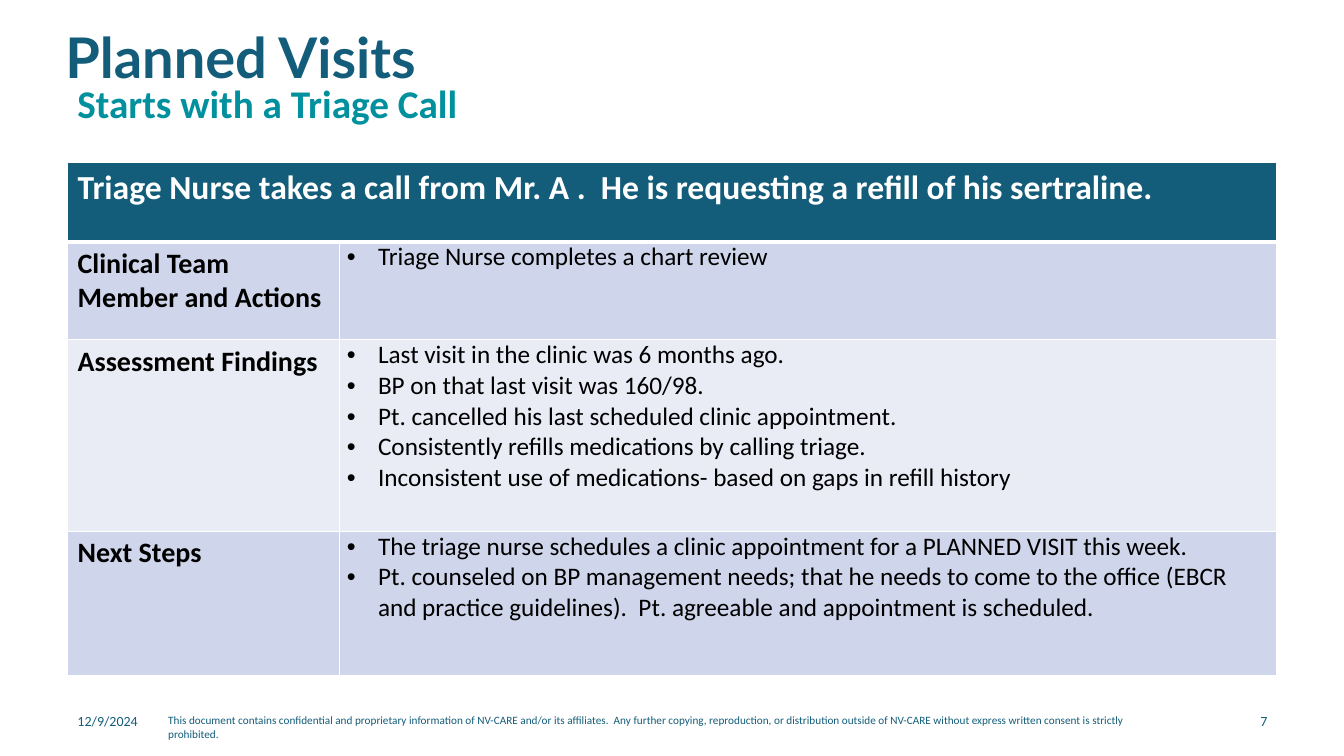
"""Build the Planned Visits triage call slide."""
import pptx
import pptx.dml.color
import pptx.enum.text
import pptx.oxml
import pptx.oxml.ns
import pptx.util
from pptx.util import Inches

RGBColor = pptx.dml.color.RGBColor
ALIGN = pptx.enum.text.PP_ALIGN
ANCHOR = pptx.enum.text.MSO_ANCHOR

NAVY = RGBColor(0x13, 0x5D, 0x7A)
TEAL = RGBColor(0x00, 0x90, 0x9E)
WHITE = RGBColor(0xFF, 0xFF, 0xFF)
BLACK = RGBColor(0x00, 0x00, 0x00)
BAND_DARK = RGBColor(0xCF, 0xD5, 0xEA)
BAND_LIGHT = RGBColor(0xE9, 0xEB, 0xF5)

HEADLINE = "Triage Nurse takes a call from Mr. A .  He is requesting a refill of his sertraline."
VISIT_STEPS = [
    ("Clinical Team Member and Actions", ["Triage Nurse completes a chart review"]),
    ("Assessment Findings", [
        "Last visit in the clinic was 6 months ago.",
        "BP on that last visit was 160/98.",
        "Pt. cancelled his last scheduled clinic appointment.",
        "Consistently refills medications by calling triage.",
        "Inconsistent use of medications- based on gaps in refill history",
    ]),
    ("Next Steps", [
        "The triage nurse schedules a clinic appointment for a PLANNED VISIT this week.",
        "Pt. counseled on BP management needs; that he needs to come to the office "
        "(EBCR and practice guidelines).  Pt. agreeable and appointment is scheduled.",
    ]),
]
NOTICE = (
    "This document contains confidential and proprietary information of NV-CARE and/or its "
    "affiliates.  Any further copying, reproduction, or distribution outside of NV-CARE "
    "without express written consent is strictly prohibited."
)
COLUMN_WIDTHS = [2.7, 9.29]
ROW_HEIGHTS = [0.79, 0.97, 1.9, 1.43]


def style_runs(paragraph, size, color, bold=False, font="Calibri"):
    """Format every run of a paragraph."""
    for run in paragraph.runs:
        run.font.name = font
        run.font.size = pptx.util.Pt(size)
        run.font.bold = bold
        run.font.color.rgb = color


def add_label(slide, box, text, size, color=NAVY, bold=False, font="Calibri",
              anchor=ANCHOR.TOP, align=ALIGN.LEFT, spacing=1.0):
    """Add one line of text in a box."""
    frame = slide.shapes.add_textbox(*map(Inches, box)).text_frame
    frame.word_wrap = True
    frame.vertical_anchor = anchor
    frame.text = text
    paragraph = frame.paragraphs[0]
    paragraph.alignment = align
    paragraph.line_spacing = spacing
    style_runs(paragraph, size, color, bold, font)


def finish_cell(cell, fill, top=1, bottom=1):
    """Give a cell white borders and a solid fill."""
    properties = cell._tc.get_or_add_tcPr()
    for side, width in (("L", 1), ("R", 1), ("T", top), ("B", bottom)):
        properties.append(pptx.oxml.parse_xml(
            f'<a:ln{side} {pptx.oxml.ns.nsdecls("a")} w="{pptx.util.Pt(width)}">'
            f'<a:solidFill><a:srgbClr val="{WHITE}"/></a:solidFill></a:ln{side}>'))
    cell.fill.solid()
    cell.fill.fore_color.rgb = fill


def fill_heading(cell, text, size, color):
    """Write a bold heading in a cell."""
    cell.text_frame.text = text
    style_runs(cell.text_frame.paragraphs[0], size, color, bold=True)


def fill_bullets(cell, items):
    """Write a bulleted list in a cell."""
    cell.margin_left = cell.margin_right = Inches(0.07)
    cell.margin_top = cell.margin_bottom = Inches(0)
    cell.text_frame.text = "\n".join(items)
    for paragraph in cell.text_frame.paragraphs:
        properties = paragraph._p.get_or_add_pPr()
        properties.set("marL", str(Inches(0.31)))
        properties.set("indent", str(-Inches(0.31)))
        for bullet in ('a:buFont {} typeface="Arial"', 'a:buChar {} char="•"'):
            properties.append(pptx.oxml.parse_xml(
                f'<{bullet.format(pptx.oxml.ns.nsdecls("a"))}/>'))
        style_runs(paragraph, 18, BLACK)


def add_visit_table(slide):
    """Add the table of triage call steps."""
    box = (0.67, 1.61, sum(COLUMN_WIDTHS), sum(ROW_HEIGHTS))
    table = slide.shapes.add_table(
        len(ROW_HEIGHTS), len(COLUMN_WIDTHS), *map(Inches, box)).table
    for column, width in zip(table.columns, COLUMN_WIDTHS):
        column.width = Inches(width)
    for row, height in zip(table.rows, ROW_HEIGHTS):
        row.height = Inches(height)
    table.cell(0, 0).merge(table.cell(0, 1))
    fill_heading(table.cell(0, 0), HEADLINE, 24, WHITE)
    for cell in table.rows[0].cells:
        finish_cell(cell, NAVY, bottom=3)
    for index, (step, items) in enumerate(VISIT_STEPS, start=1):
        fill_heading(table.cell(index, 0), step, 20, BLACK)
        fill_bullets(table.cell(index, 1), items)
        for cell in table.rows[index].cells:
            finish_cell(cell, BAND_DARK if index % 2 else BAND_LIGHT,
                        top=3 if index == 1 else 1)


def main():
    """Build and save the slide."""
    deck = pptx.Presentation()
    deck.slide_width, deck.slide_height = Inches(13.33), Inches(7.5)
    slide = deck.slides.add_slide(deck.slide_layouts[6])
    add_label(slide, (0.55, 0.25, 11.75, 0.62), "Planned Visits", 40,
              bold=True, font="Lato", spacing=0.9)
    add_label(slide, (0.67, 0.41, 11.66, 0.9), "Starts with a Triage Call", 28,
              TEAL, bold=True, anchor=ANCHOR.BOTTOM, spacing=0.9)
    add_visit_table(slide)
    add_label(slide, (0.67, 6.95, 1.01, 0.4), "12/9/2024", 10, anchor=ANCHOR.MIDDLE)
    add_label(slide, (1.57, 7.03, 10.2, 0.32), NOTICE, 8)
    add_label(slide, (11.66, 6.95, 1.01, 0.4), "7", 10,
              anchor=ANCHOR.MIDDLE, align=ALIGN.RIGHT)
    deck.save("out.pptx")


if __name__ == "__main__":
    main()
